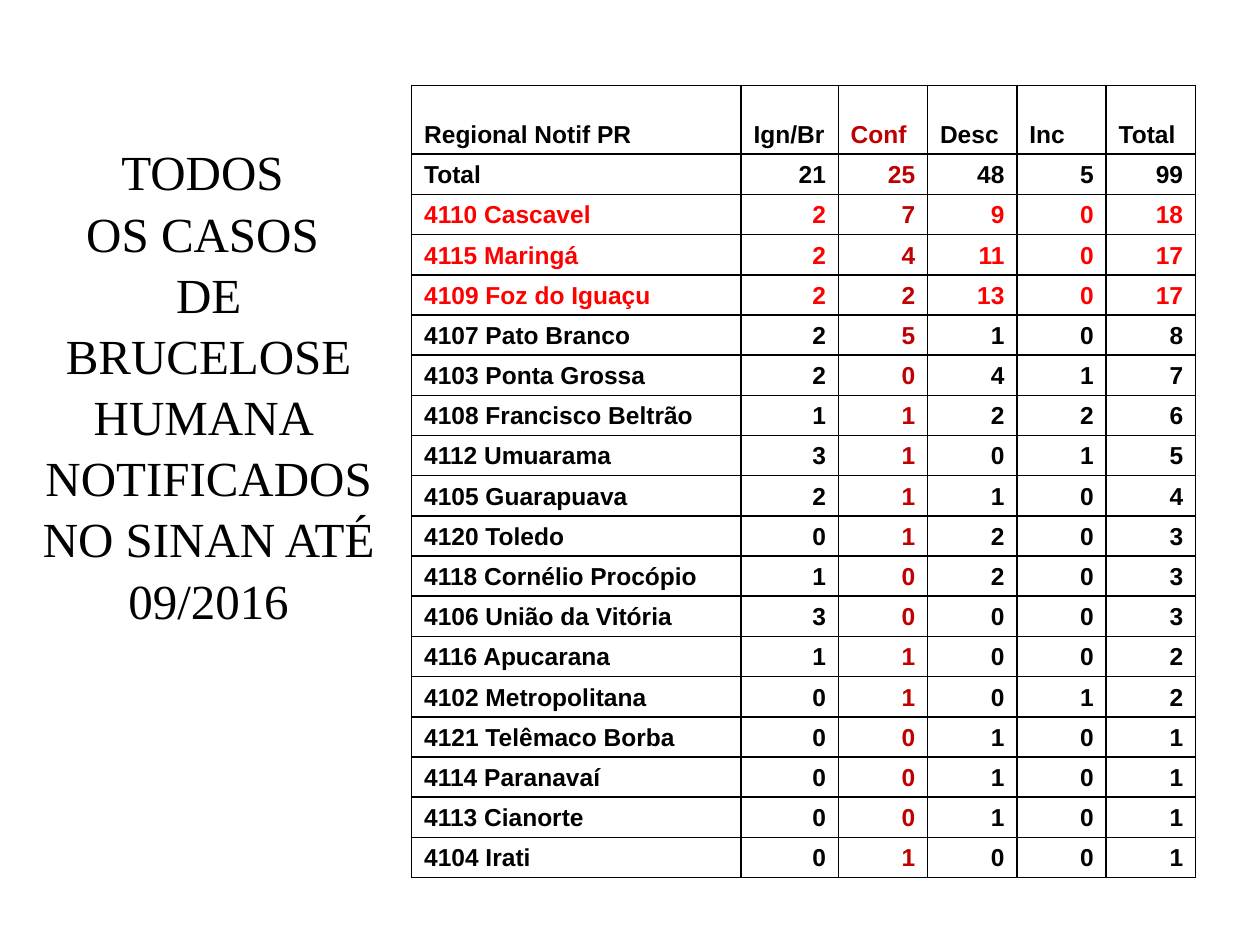
from lxml import etree
from pptx import Presentation
from pptx.dml.color import RGBColor
from pptx.enum.text import MSO_ANCHOR, MSO_AUTO_SIZE, PP_ALIGN
from pptx.oxml.ns import qn
from pptx.util import Cm, Pt

CENTER, LEFT, RIGHT = PP_ALIGN.CENTER, PP_ALIGN.LEFT, PP_ALIGN.RIGHT
MIDDLE, BOTTOM = MSO_ANCHOR.MIDDLE, MSO_ANCHOR.BOTTOM
NO_AUTOFIT = MSO_AUTO_SIZE.NONE
TITLE_ONLY_LAYOUT = 5

COLORS = {"text": "000000", "confirmed": "C00000", "highlight": "FF0000", "border": "000000"}
TITLE_LINES = ["TODOS ", "OS CASOS ", "DE BRUCELOSE HUMANA ", "NOTIFICADOS NO SINAN ATÉ 09/2016"]
HEADERS = ("Regional Notif PR", "Ign/Br", "Conf", "Desc", "Inc", "Total")
CASES = [
    ("Total", 21, 25, 48, 5, 99),
    ("4110 Cascavel", 2, 7, 9, 0, 18),
    ("4115 Maringá", 2, 4, 11, 0, 17),
    ("4109 Foz do Iguaçu", 2, 2, 13, 0, 17),
    ("4107 Pato Branco", 2, 5, 1, 0, 8),
    ("4103 Ponta Grossa", 2, 0, 4, 1, 7),
    ("4108 Francisco Beltrão", 1, 1, 2, 2, 6),
    ("4112 Umuarama", 3, 1, 0, 1, 5),
    ("4105 Guarapuava", 2, 1, 1, 0, 4),
    ("4120 Toledo", 0, 1, 2, 0, 3),
    ("4118 Cornélio Procópio", 1, 0, 2, 0, 3),
    ("4106 União da Vitória", 3, 0, 0, 0, 3),
    ("4116 Apucarana", 1, 1, 0, 0, 2),
    ("4102 Metropolitana", 0, 1, 0, 1, 2),
    ("4121 Telêmaco Borba", 0, 0, 1, 0, 1),
    ("4114 Paranavaí", 0, 0, 1, 0, 1),
    ("4113 Cianorte", 0, 0, 1, 0, 1),
    ("4104 Irati", 0, 1, 0, 0, 1),
]
HIGHLIGHTED_ROWS = (2, 3, 4)
CONFIRMED_COLUMN = HEADERS.index("Conf")
COLUMN_WIDTHS = [6.64, 1.96, 1.8, 1.8, 1.8, 1.8]
HEADER_HEIGHT, ROW_HEIGHT = 1.39, 0.81


def format_run(run, font_name, size, color, bold=False):
    run.font.name = font_name
    run.font.size = Pt(size)
    run.font.bold = bold
    run.font.color.rgb = RGBColor.from_string(COLORS[color])


def add_borders(cell):
    properties = cell._tc.get_or_add_tcPr()
    for position, side in enumerate(("a:lnL", "a:lnR", "a:lnT", "a:lnB")):
        line = etree.Element(qn(side), w=str(Pt(1)))
        fill = etree.SubElement(line, qn("a:solidFill"))
        etree.SubElement(fill, qn("a:srgbClr"), val=COLORS["border"])
        properties.insert(position, line)


def cell_color(row, column):
    if column == CONFIRMED_COLUMN:
        return "confirmed"
    return "highlight" if row in HIGHLIGHTED_ROWS else "text"


def add_title(slide):
    title = slide.shapes.title
    title.left, title.top, title.width, title.height = Cm(0.51), Cm(6.73), Cm(7.39), Cm(2.03)
    frame = title.text_frame
    frame.word_wrap = True
    frame.auto_size = NO_AUTOFIT
    frame.vertical_anchor = MIDDLE
    paragraph = frame.paragraphs[0]
    paragraph.alignment = CENTER
    paragraph.line_spacing = 1.04
    for index, text in enumerate(TITLE_LINES):
        if index:
            paragraph.add_line_break()
        run = paragraph.add_run()
        run.text = text
        format_run(run, "Times New Roman", 28, "text")


def add_case_table(slide):
    rows = [HEADERS] + CASES
    height = HEADER_HEIGHT + ROW_HEIGHT * len(CASES)
    shape = slide.shapes.add_table(len(rows), len(HEADERS), Cm(8.3), Cm(1.72),
                                   Cm(sum(COLUMN_WIDTHS)), Cm(height))
    table = shape.table
    table.first_row = False
    table.horz_banding = False
    for column, width in zip(table.columns, COLUMN_WIDTHS):
        column.width = Cm(width)
    for row_index, values in enumerate(rows):
        table.rows[row_index].height = Cm(ROW_HEIGHT if row_index else HEADER_HEIGHT)
        for column_index, value in enumerate(values):
            cell = table.cell(row_index, column_index)
            cell.fill.background()
            cell.vertical_anchor = BOTTOM
            cell.margin_left = cell.margin_right = Cm(0.25)
            cell.margin_top = cell.margin_bottom = Cm(0.11)
            add_borders(cell)
            paragraph = cell.text_frame.paragraphs[0]
            paragraph.alignment = RIGHT if row_index and column_index else LEFT
            run = paragraph.add_run()
            run.text = str(value)
            format_run(run, "Arial", 14, cell_color(row_index, column_index), bold=True)


def main():
    presentation = Presentation()
    presentation.slide_width, presentation.slide_height = Cm(25.4), Cm(19.05)
    slide = presentation.slides.add_slide(presentation.slide_layouts[TITLE_ONLY_LAYOUT])
    add_title(slide)
    add_case_table(slide)
    presentation.save("out.pptx")


if __name__ == "__main__":
    main()
